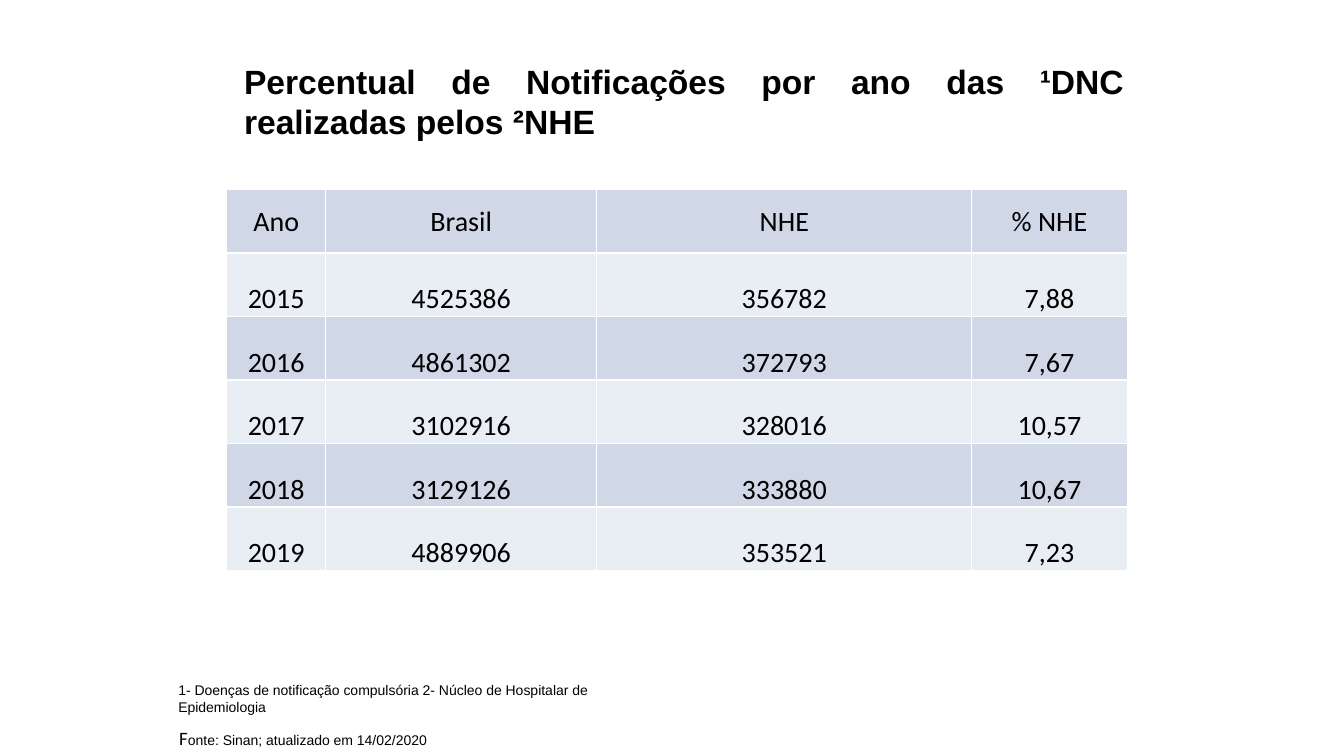
import pptx
import pptx.dml.color
import pptx.enum.text
import pptx.oxml
import pptx.oxml.ns
import pptx.util

In, Pt = pptx.util.Inches, pptx.util.Pt
Align, Anchor = pptx.enum.text.PP_ALIGN, pptx.enum.text.MSO_ANCHOR

TITLE = "Percentual de Notificações por ano das ¹DNC realizadas pelos ²NHE"
ROWS = [
    ("Ano", "Brasil", "NHE", "% NHE"),
    ("2015", "4525386", "356782", "7,88"),
    ("2016", "4861302", "372793", "7,67"),
    ("2017", "3102916", "328016", "10,57"),
    ("2018", "3129126", "333880", "10,67"),
    ("2019", "4889906", "353521", "7,23"),
]
NOTE = "1- Doenças de notificação compulsória 2- Núcleo de Hospitalar de Epidemiologia"
SOURCE = [("F", 13.5, "Calibri"), ("onte: Sinan; atualizado em 14/02/2020", 10, "Arial")]

WIDE, HIGH = 13.33, 7.5
COLS = (0.98, 2.69, 3.72, 1.54)
ROW = 0.63
BANDS = ("D0D8E8", "E9EDF4")
BLACK, WHITE = "000000", "FFFFFF"
EDGE = 1.67


def rgb(code):
    return pptx.dml.color.RGBColor.from_string(code)


def place(shape, left, top, width, height):
    shape.left, shape.top = In(left), In(top)
    shape.width, shape.height = In(width), In(height)


def write(frame, runs, align, bold=False):
    para = frame.paragraphs[0]
    para.alignment = align
    for text, size, face in runs:
        run = para.add_run()
        run.text = text
        run.font.size, run.font.name, run.font.bold = Pt(size), face, bold
        run.font.color.rgb = rgb(BLACK)


def rule(cell, code, points):
    """Draw the four borders of a cell, placed ahead of its fill."""
    props = cell._tc.get_or_add_tcPr()
    for spot, side in enumerate(("lnL", "lnR", "lnT", "lnB")):
        props.insert(spot, pptx.oxml.parse_xml(
            f'<a:{side} {pptx.oxml.ns.nsdecls("a")} w="{Pt(points)}">'
            f'<a:solidFill><a:srgbClr val="{code}"/></a:solidFill></a:{side}>'))


def add_title(slide):
    title = slide.shapes.title
    place(title, 2.32, 0.55, sum(COLS), 0.91)
    frame = title.text_frame
    frame.auto_size = pptx.enum.text.MSO_AUTO_SIZE.NONE
    frame.word_wrap = True
    frame.vertical_anchor = Anchor.TOP
    write(frame, [(TITLE, 24, "Arial")], Align.JUSTIFY, True)


def add_grid(slide):
    table = slide.shapes.add_table(
        len(ROWS), len(COLS), In(2.25), In(1.88),
        In(sum(COLS)), In(ROW * len(ROWS))).table
    for col, width in zip(table.columns, COLS):
        col.width = In(width)
    for r, row in enumerate(ROWS):
        for c, text in enumerate(row):
            cell = table.cell(r, c)
            cell.margin_left = cell.margin_right = cell.margin_top = In(0.01)
            cell.margin_bottom = 0
            cell.vertical_anchor = Anchor.BOTTOM if r else Anchor.MIDDLE
            cell.fill.solid()
            cell.fill.fore_color.rgb = rgb(BANDS[r % 2])
            rule(cell, WHITE, 1)
            write(cell.text_frame, [(text, 20, "Calibri")], Align.CENTER)


def add_note(slide, box, runs, align, anchor, inset):
    frame = slide.shapes.add_textbox(*map(In, box)).text_frame
    frame.word_wrap = True
    frame.vertical_anchor = anchor
    frame.margin_left = frame.margin_right = In(inset)
    write(frame, runs, align)


def main():
    deck = pptx.Presentation()
    deck.slide_width, deck.slide_height = In(WIDE), In(HIGH)
    slide = deck.slides.add_slide(deck.slide_layouts[5])
    add_title(slide)
    add_grid(slide)
    add_note(slide, (EDGE, 6.71, 4.38, 0.44), [(NOTE, 10, "Arial")],
             Align.LEFT, Anchor.TOP, 0.1)
    add_note(slide, (EDGE, 7.15, 2.67, 0.35), SOURCE,
             Align.CENTER, Anchor.MIDDLE, 0)
    deck.save("out.pptx")


if __name__ == "__main__":
    main()
